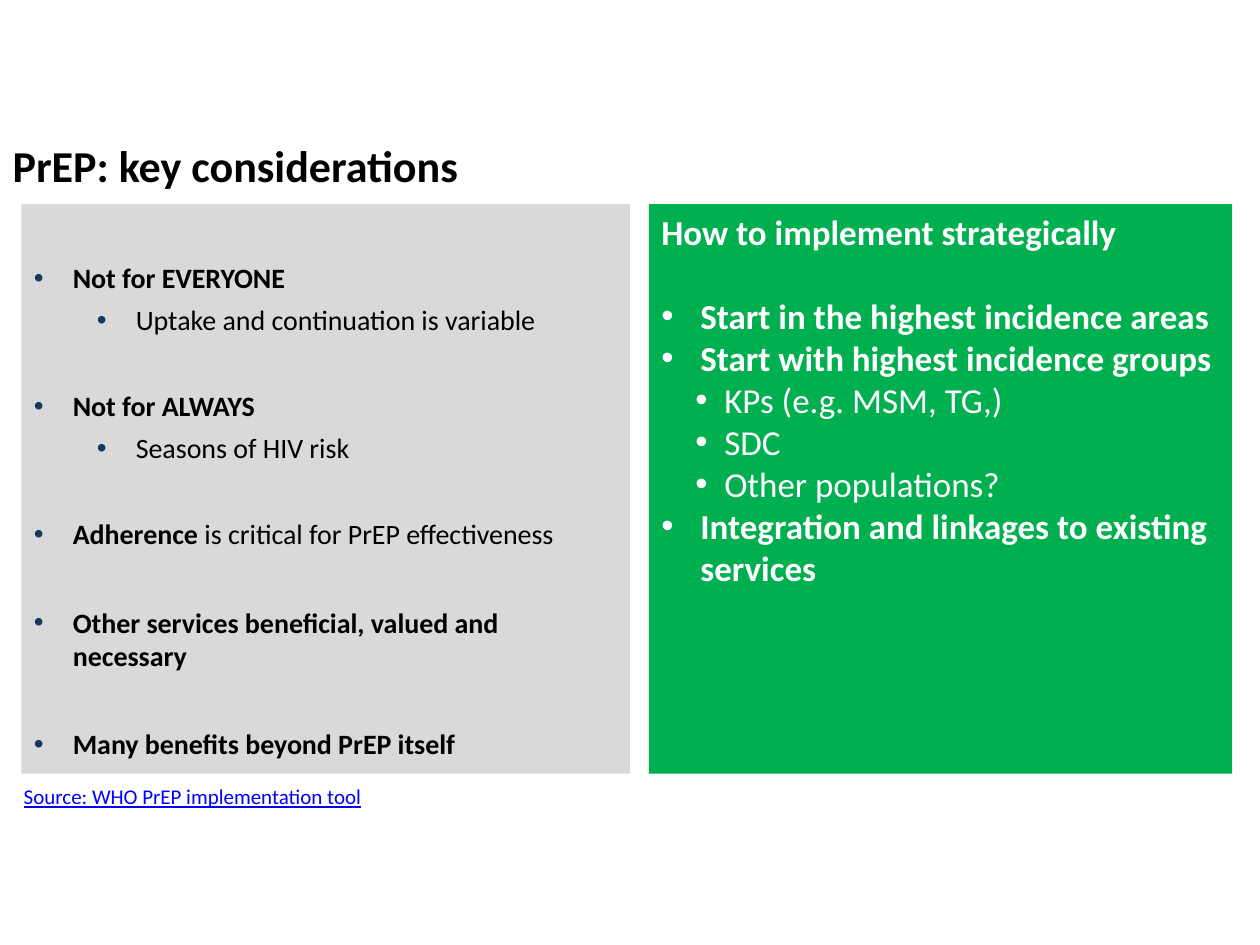
from lxml.etree import SubElement
from pptx import Presentation
from pptx.dml.color import RGBColor
from pptx.enum.text import MSO_ANCHOR, MSO_AUTO_SIZE, PP_ALIGN
from pptx.oxml.ns import qn
from pptx.util import Inches, Pt

FONT = "Calibri"
LINE_PITCH = 1.2
PANEL_TOP, PANEL_HEIGHT = 1.62, 4.52

TITLE = [{"runs": [("PrEP: key considerations", True)]}]
SOURCE = [{"runs": [("Source: WHO PrEP implementation tool", False)]}]

CONSIDERATIONS = [
    {"runs": [("Not for EVERYONE", True)], "level": 0},
    {"runs": [("Uptake and continuation is variable", False)], "level": 1, "before": 4.8},
    {"runs": [("Not for ALWAYS", True)], "level": 0, "before": 30},
    {"runs": [("Seasons of HIV risk", False)], "level": 1, "before": 4.8},
    {"runs": [("Adherence", True), (" is critical for PrEP effectiveness", False)],
     "level": 0, "before": 30},
    {"runs": [("Other services beneficial, valued and necessary", True)],
     "level": 0, "before": 31.2},
    {"runs": [("Many benefits beyond PrEP itself", True)], "level": 0, "before": 31.2},
]

STRATEGY = [
    {"runs": [("How to implement strategically", True)]},
    {"runs": [("Start in the highest incidence areas", True)], "level": 0, "before": 24},
    {"runs": [("Start with highest incidence groups", True)], "level": 0},
    {"runs": [("KPs (e.g. MSM, TG,)", False)], "level": 1},
    {"runs": [("SDC", False)], "level": 1},
    {"runs": [("Other populations?", False)], "level": 1},
    {"runs": [("Integration and linkages to existing services", True)], "level": 0},
]


def color(value):
    return RGBColor.from_string(value)


def place(shape, left, top, width, height, fill):
    shape.left, shape.top = Inches(left), Inches(top)
    shape.width, shape.height = Inches(width), Inches(height)
    shape.fill.solid()
    shape.fill.fore_color.rgb = color(fill)


def add_bullet(paragraph, indent, bullet_color):
    left, hanging = indent
    properties = paragraph._p.get_or_add_pPr()
    properties.set("marL", str(Inches(left)))
    properties.set("indent", str(-Inches(hanging)))
    tint = SubElement(properties, qn("a:buClr"))
    SubElement(tint, qn("a:srgbClr"), val=bullet_color)
    SubElement(properties, qn("a:buFont"), typeface="Arial")
    SubElement(properties, qn("a:buChar"), char="•")


def write(shape, items, size, text_color, insets=(0.1, 0.05, 0.1, 0.05), indents=(),
          bullet_color=None, anchor=MSO_ANCHOR.TOP, underline=False):
    frame = shape.text_frame
    frame.word_wrap = True
    frame.auto_size = MSO_AUTO_SIZE.NONE
    frame.vertical_anchor = anchor
    frame.margin_left, frame.margin_top, frame.margin_right, frame.margin_bottom = map(
        Inches, insets)
    for index, item in enumerate(items):
        paragraph = frame.add_paragraph() if index else frame.paragraphs[0]
        if "level" in item:
            paragraph.level = item["level"]
            add_bullet(paragraph, indents[item["level"]], bullet_color)
        paragraph.alignment = PP_ALIGN.LEFT
        paragraph.line_spacing = Pt(size * LINE_PITCH)
        paragraph.space_before = Pt(item.get("before", 0))
        for text, bold in item["runs"]:
            run = paragraph.add_run()
            run.text = text
            run.font.name = FONT
            run.font.size = Pt(size)
            run.font.bold = bold
            run.font.underline = underline
            run.font.color.rgb = color(text_color)


def main():
    presentation = Presentation()
    presentation.slide_width, presentation.slide_height = Inches(10), Inches(7.5)
    slide = presentation.slides.add_slide(presentation.slide_layouts[5])

    title = slide.shapes.title
    place(title, 0, 1, 10, PANEL_TOP - 1, "FFFFFF")
    write(title, TITLE, 25.2, "000000", anchor=MSO_ANCHOR.MIDDLE)

    strategy = slide.shapes.add_textbox(0, 0, 0, 0)
    place(strategy, 5.15, PANEL_TOP, 4.63, PANEL_HEIGHT, "00B050")
    write(strategy, STRATEGY, 20, "FFFFFF", indents=[(0.31, 0.31), (0.5, 0.23)],
          bullet_color="FFFFFF")

    considerations = slide.shapes.add_textbox(0, 0, 0, 0)
    place(considerations, 0.17, PANEL_TOP, 4.83, PANEL_HEIGHT, "D9D9D9")
    write(considerations, CONSIDERATIONS, 16, "000000", insets=(0.1, 0.45, 0.15, 0.05),
          indents=[(0.31, 0.31), (0.81, 0.31)], bullet_color="17375E")

    source = slide.shapes.add_textbox(0, 0, 0, 0)
    place(source, 0.09, 6.17, 7.5, 0.3, "FFFFFF")
    write(source, SOURCE, 12, "0000FF", underline=True)

    presentation.save("out.pptx")


if __name__ == "__main__":
    main()
